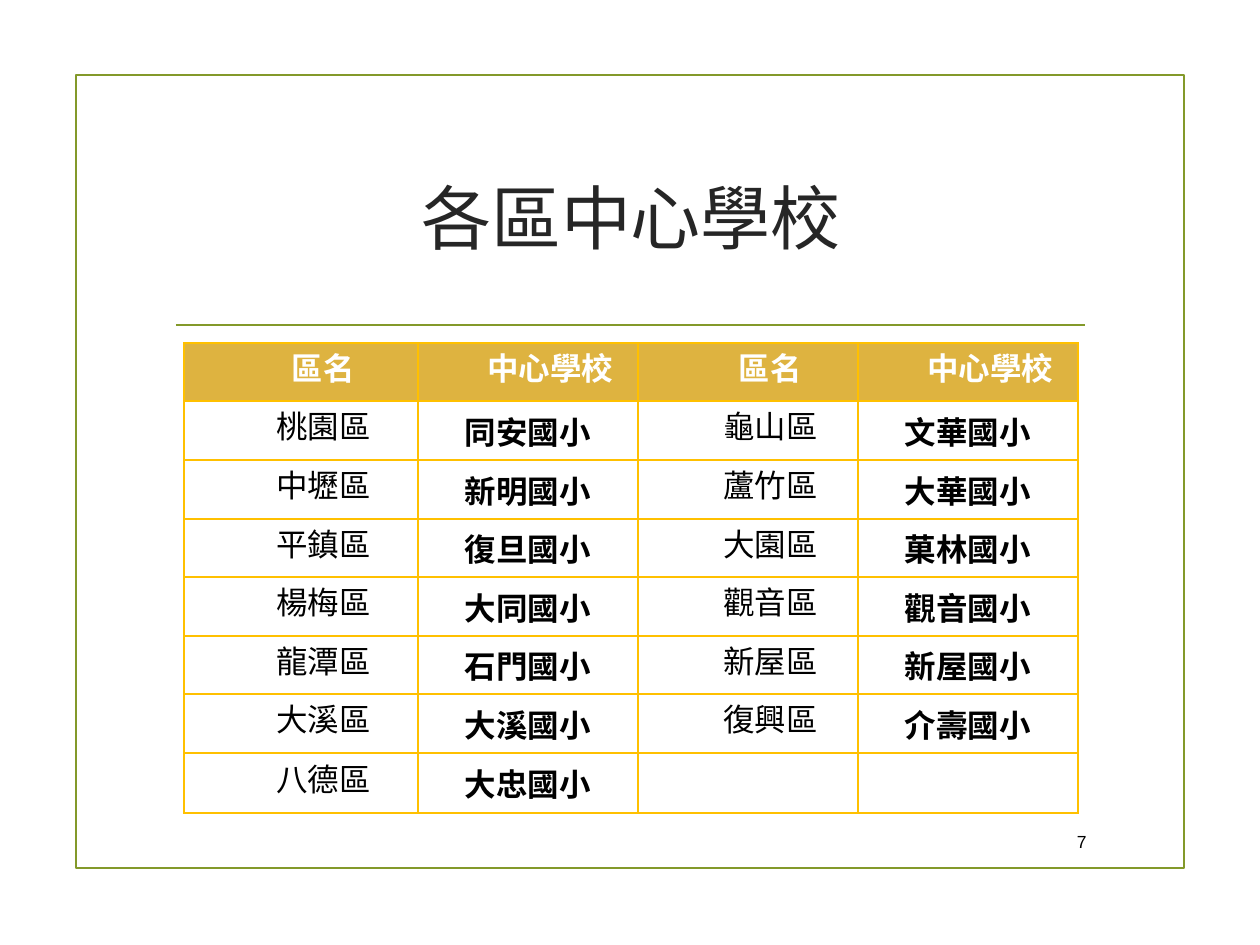
from dataclasses import dataclass

from lxml import etree
from pptx import Presentation
from pptx.dml.color import RGBColor
from pptx.enum.shapes import MSO_CONNECTOR, MSO_SHAPE
from pptx.enum.text import MSO_ANCHOR, PP_ALIGN
from pptx.oxml.ns import qn
from pptx.util import Emu, Pt

PX = 914400 // 126
MIDDLE = MSO_ANCHOR.MIDDLE
CENTER, RIGHT = PP_ALIGN.CENTER, PP_ALIGN.RIGHT


@dataclass(frozen=True)
class Theme:
    green: str = "83992A"
    gold: str = "FFC000"
    header: str = "DEB340"
    title: str = "262626"
    black: str = "000000"
    white: str = "FFFFFF"
    serif: str = "Times New Roman"
    sans: str = "Arial"
    title_size: int = 40
    table_size: int = 18
    number_size: int = 10


THEME = Theme()


def set_font(paragraph, name, size, color, bold=False):
    font = paragraph.font
    font.name, font.size, font.bold = name, Pt(size), bold
    font.color.rgb = RGBColor.from_string(color)


def add_borders(cell):
    """Draw all four sides; the line elements must precede the cell fill."""
    properties = cell._tc.get_or_add_tcPr()
    for position, side in enumerate(("lnL", "lnR", "lnT", "lnB")):
        line = etree.Element(qn(f"a:{side}"), w=str(Pt(1)))
        fill = etree.SubElement(line, qn("a:solidFill"))
        etree.SubElement(fill, qn("a:srgbClr"), val=THEME.gold)
        properties.insert(position, line)


prs = Presentation()
prs.slide_width, prs.slide_height = Emu(1260 * PX), Emu(945 * PX)
slide = prs.slides.add_slide(prs.slide_layouts[5])
shapes = slide.shapes

# Frame and rule
frame = shapes.add_shape(MSO_SHAPE.RECTANGLE, 76 * PX, 75 * PX, 1108 * PX, 793 * PX)
frame.shadow.inherit = False
frame.fill.background()
rule = shapes.add_connector(MSO_CONNECTOR.STRAIGHT, 176 * PX, 325 * PX, 1085 * PX, 325 * PX)
etree.SubElement(rule._element.spPr, qn("a:effectLst"))
for outlined in (frame, rule):
    outlined.line.color.rgb = RGBColor.from_string(THEME.green)
    outlined.line.width = Pt(1.25)

# Title
title = shapes.title
title.left, title.top, title.width, title.height = 162 * PX, 126 * PX, 938 * PX, 180 * PX
title.text_frame.text = "各區中心學校"
title.text_frame.vertical_anchor = MIDDLE
heading = title.text_frame.paragraphs[0]
heading.alignment = CENTER
set_font(heading, THEME.serif, THEME.title_size, THEME.title)

# Slide number
number_box = shapes.add_textbox(1045 * PX, 822 * PX, 54 * PX, 39 * PX)
number_box.text_frame.word_wrap = True
number_box.text_frame.vertical_anchor = MIDDLE
number = number_box.text_frame.paragraphs[0]
number.text = "7"
number.alignment = RIGHT
set_font(number, THEME.sans, THEME.number_size, THEME.black)

# Districts and their centre schools, two pairs to a row
rows = [
    ("區名", "中心學校", "區名", "中心學校"),
    ("桃園區", "同安國小", "龜山區", "文華國小"),
    ("中壢區", "新明國小", "蘆竹區", "大華國小"),
    ("平鎮區", "復旦國小", "大園區", "菓林國小"),
    ("楊梅區", "大同國小", "觀音區", "觀音國小"),
    ("龍潭區", "石門國小", "新屋區", "新屋國小"),
    ("大溪區", "大溪國小", "復興區", "介壽國小"),
    ("八德區", "大忠國小", "", ""),
]
column_widths = [234, 220, 220, 220]
row_heights = [58, 59, 59, 58, 59, 58, 59, 60]
schools = shapes.add_table(
    len(rows), len(column_widths), 184 * PX, 343 * PX,
    sum(column_widths) * PX, sum(row_heights) * PX,
).table
for column, width in zip(schools.columns, column_widths):
    column.width = width * PX
for row, height in zip(schools.rows, row_heights):
    row.height = height * PX

for r, texts in enumerate(rows):
    for c, text in enumerate(texts):
        cell = schools.cell(r, c)
        is_header, is_school = r == 0, c % 2 == 1
        cell.vertical_anchor = MIDDLE
        cell.margin_left = cell.margin_right = 9 * PX
        cell.margin_top = cell.margin_bottom = 0
        if is_header:
            cell.fill.solid()
            cell.fill.fore_color.rgb = RGBColor.from_string(THEME.header)
        else:
            cell.fill.background()
        add_borders(cell)

        cell.text = text
        entry = cell.text_frame.paragraphs[0]
        entry.alignment = CENTER
        if is_header or not is_school:
            entry.line_spacing = Pt(20)
            entry._p.get_or_add_pPr().set("marL", str(45 * PX))
        set_font(
            entry,
            THEME.sans if is_header or c > 0 else THEME.serif,
            THEME.table_size,
            THEME.white if is_header else THEME.black,
            bold=is_header or is_school,
        )

prs.save("out.pptx")
